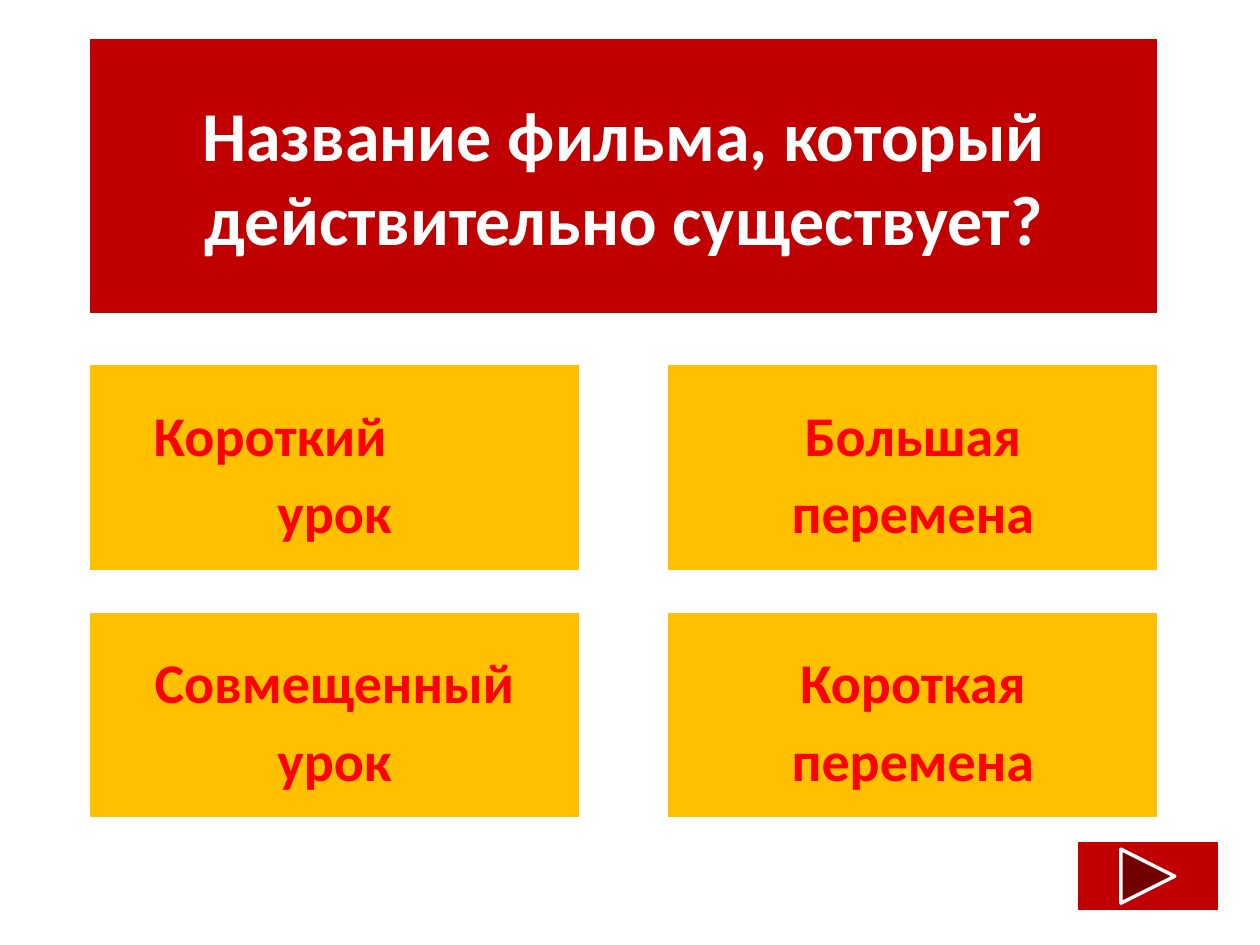
import pptx
import pptx.util
import pptx.dml.color
import pptx.enum.shapes
import pptx.enum.text

Cm = pptx.util.Cm
Pt = pptx.util.Pt
ALIGN = pptx.enum.text.PP_ALIGN
SHAPES = pptx.enum.shapes.MSO_SHAPE

RED, AMBER, WHITE, ANSWER_RED = "C00000", "FFC000", "FFFFFF", "FF0000"


def color(hex_string):
    return pptx.dml.color.RGBColor.from_string(hex_string)


def paint(panel, fill):
    panel.fill.solid()
    panel.fill.fore_color.rgb = color(fill)
    panel.line.color.rgb = color(WHITE)
    panel.line.width = Pt(2)


def place(panel, box):
    panel.left, panel.top, panel.width, panel.height = (Cm(v) for v in box)


def add_run(paragraph, text, size, hex_string):
    run = paragraph.add_run()
    run.text = text
    run.font.name = "Calibri"
    run.font.size = Pt(size)
    run.font.bold = True
    run.font.color.rgb = color(hex_string)


def add_panel(slide, preset, box, fill):
    panel = slide.shapes.add_shape(preset, *(Cm(v) for v in box))
    panel.shadow.inherit = False
    paint(panel, fill)
    return panel


def fill_question(slide, box, text):
    question = slide.shapes.title
    place(question, box)
    paint(question, RED)
    frame = question.text_frame
    frame.word_wrap = True
    frame.auto_size = pptx.enum.text.MSO_AUTO_SIZE.NONE
    frame.vertical_anchor = pptx.enum.text.MSO_ANCHOR.MIDDLE
    frame.paragraphs[0].alignment = ALIGN.CENTER
    add_run(frame.paragraphs[0], text, 40, WHITE)


def add_answer(slide, box, lines):
    """Each line is a (text, left indent in cm) pair; no indent means centred."""
    frame = add_panel(slide, SHAPES.RECTANGLE, box, AMBER).text_frame
    frame.word_wrap = True
    frame.vertical_anchor = pptx.enum.text.MSO_ANCHOR.MIDDLE
    for number, (text, indent) in enumerate(lines):
        paragraph = frame.add_paragraph() if number else frame.paragraphs[0]
        paragraph.line_spacing = 1.15
        paragraph.space_after = Pt(10 if number == len(lines) - 1 else 0)
        paragraph.alignment = ALIGN.LEFT if indent else ALIGN.CENTER
        if indent:
            paragraph._p.get_or_add_pPr().set("marL", str(Cm(indent)))
        add_run(paragraph, text, 32, ANSWER_RED)


def add_answer_grid(slide, box, answers, gaps):
    left, top, width, height = box
    gap_x, gap_y = gaps
    cell_width, cell_height = (width - gap_x) / 2, (height - gap_y) / 2
    for number, lines in enumerate(answers):
        row, column = divmod(number, 2)
        cell = (left + column * (cell_width + gap_x),
                top + row * (cell_height + gap_y), cell_width, cell_height)
        add_answer(slide, cell, lines)


def main():
    presentation = pptx.Presentation()
    presentation.slide_width, presentation.slide_height = Cm(25.4), Cm(19.05)
    slide = presentation.slides.add_slide(presentation.slide_layouts[5])

    # Question
    fill_question(slide, (1.78, 0.75, 21.59, 5.59),
                  "Название фильма, который действительно существует?")

    # Answers
    answers = [
        [("Короткий", 1.07), ("урок", 0)],
        [("Большая перемена", 0)],
        [("Совмещенный урок", 0)],
        [("Короткая перемена", 0)],
    ]
    add_answer_grid(slide, (1.78, 7.33, 21.59, 9.18), answers, (1.73, 0.8))

    # Next button
    add_panel(slide, SHAPES.ACTION_BUTTON_FORWARD_OR_NEXT,
              (21.69, 16.94, 2.9, 1.45), RED)

    presentation.save("out.pptx")


if __name__ == "__main__":
    main()
